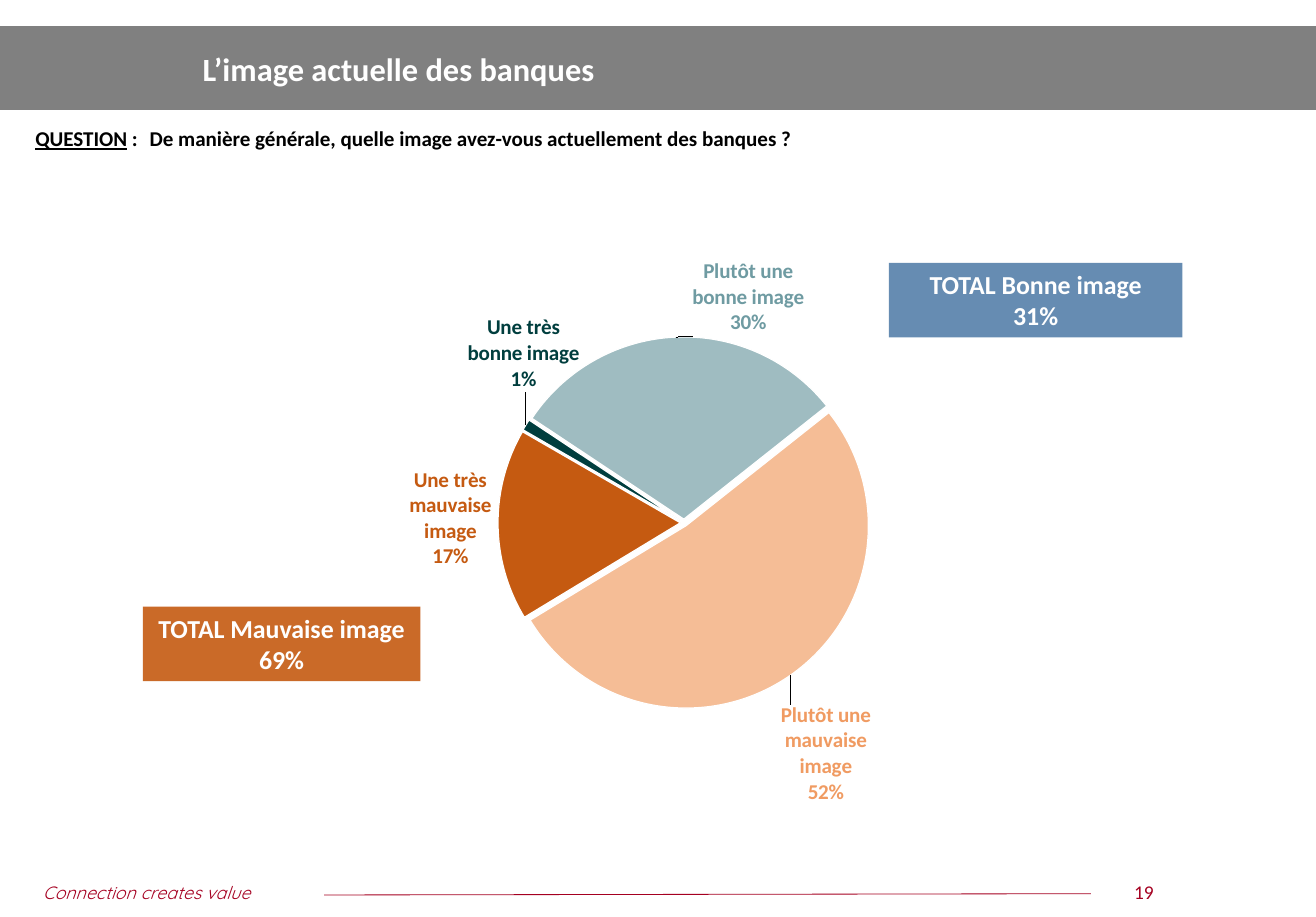
from dataclasses import dataclass

import lxml.etree
import pptx
import pptx.chart.data
import pptx.dml.color
import pptx.enum.chart
import pptx.enum.shapes
import pptx.enum.text
import pptx.oxml
import pptx.oxml.ns
import pptx.util

Pt = pptx.util.Pt
qn = pptx.oxml.ns.qn
Align = pptx.enum.text.PP_ALIGN
Anchor = pptx.enum.text.MSO_ANCHOR
OUTER = pptx.enum.chart.XL_LABEL_POSITION.OUTSIDE_END
FONT = "Calibri"
RED = "A50021"
WHITE = "FFFFFF"


@dataclass
class Box:
    left: float
    top: float
    width: float
    height: float
    text: str = ""
    size: float = 12
    color: str = WHITE
    fill: str = ""
    alpha: int = 100
    bold: bool = False
    slant: bool = False
    align: Align = Align.CENTER
    anchor: Anchor = Anchor.TOP
    face: str = FONT


@dataclass
class Slice:
    name: str
    value: float
    fill: str
    ink: str
    shift: tuple[float, float]
    alpha: int = 100
    share: bool = True


def tint(form, code: str, alpha: int = 100) -> None:
    form.solid()
    form.fore_color.rgb = pptx.dml.color.RGBColor.from_string(code)
    if alpha < 100:
        node = form._xPr.find(qn("a:solidFill"))[0]
        lxml.etree.SubElement(node, qn("a:alpha"), val=str(alpha * 1000))


def style(font, size: float, code: str, bold: bool = False, face: str = FONT) -> None:
    font.size = Pt(size)
    font.name = face
    font.bold = bold
    tint(font.fill, code)


def draw(slide, box: Box):
    area = [Pt(n) for n in (box.left, box.top, box.width, box.height)]
    if box.fill:
        shape = slide.shapes.add_shape(pptx.enum.shapes.MSO_SHAPE.RECTANGLE, *area)
        shape.shadow.inherit = False
        tint(shape.fill, box.fill, box.alpha)
        shape.line.fill.background()
    else:
        shape = slide.shapes.add_textbox(*area)
    frame = shape.text_frame
    frame.word_wrap = True
    frame.vertical_anchor = box.anchor
    para = frame.paragraphs[0]
    para.text = box.text
    para.alignment = box.align
    style(para.font, box.size, box.color, box.bold, box.face)
    para.font.italic = box.slant
    return shape


def rule(slide, x1: float, y1: float, x2: float, y2: float) -> None:
    kind = pptx.enum.shapes.MSO_CONNECTOR.STRAIGHT
    line = slide.shapes.add_connector(kind, Pt(x1), Pt(y1), Pt(x2), Pt(y2))
    tint(line.line.fill, RED)
    line.line.width = Pt(0.5)
    lxml.etree.SubElement(line._element.spPr, qn("a:effectLst"))


def ask(slide, head: str, text: str) -> None:
    box = draw(slide, Box(15.4, 69.8, 784.8, 41.8, align=Align.JUSTIFY))
    frame = box.text_frame
    frame.margin_left, frame.margin_right = Pt(6.5), Pt(26)
    frame.margin_top = frame.margin_bottom = Pt(13)
    para = frame.paragraphs[0]
    props = para._p.get_or_add_pPr()
    props.set("marL", str(Pt(70.6)))
    props.set("indent", str(-Pt(70.6)))
    style(para.font, 13, "000000", True)
    for part, under in ((head, True), (text, False)):
        run = para.add_run()
        run.text = part
        run.font.underline = under


def place(**rules) -> lxml.etree.ElementBase:
    node = pptx.oxml.parse_xml(
        '<c:layout xmlns:c="http://schemas.openxmlformats.org/drawingml/2006/chart"/>')
    man = lxml.etree.SubElement(node, qn("c:manualLayout"))
    for name, val in rules.items():
        lxml.etree.SubElement(man, qn("c:" + name), val=str(val))
    return node


def label(point, part: Slice) -> None:
    tag = point.data_label
    style(tag.font, 13, part.ink, True)
    tag.position = OUTER
    node = tag._dLbl
    flags = {"showVal": not part.share, "showCatName": True, "showPercent": part.share}
    for name, flag in flags.items():
        node.find(qn("c:" + name)).set("val", str(int(flag)))
    lxml.etree.SubElement(node, qn("c:separator")).text = "\n"
    x, y = part.shift
    node.find(qn("c:idx")).addnext(place(x=x, y=y))


def pie(slide, parts: list[Slice]) -> None:
    data = pptx.chart.data.CategoryChartData(number_format="0%")
    data.categories = [part.name for part in parts]
    data.add_series("Series 1", [part.value for part in parts])
    kind = pptx.enum.chart.XL_CHART_TYPE.PIE
    area = [Pt(n) for n in (187.2, 136.8, 405.4, 360.7)]
    chart = slide.shapes.add_chart(kind, *area, data).chart
    chart.has_title = chart.has_legend = False
    style(chart.font, 18, "000000")
    plot = chart.plots[0]
    plot.vary_by_categories = True
    series = plot.series[0]

    # Slices and their labels
    tags = series.data_labels
    style(tags.font, 13, "000000", True)
    tags.number_format = "0%"
    tags.number_format_is_linked = False
    tags.position = OUTER
    tags.show_value = False
    tags.show_category_name = tags.show_percentage = True
    for index, part in enumerate(parts):
        point = series.points[index]
        tint(point.format.fill, part.fill, part.alpha)
        tint(point.format.line.fill, WHITE)
        point.format.line.width = Pt(0.75)
        label(point, part)
    gap = lxml.etree.Element(qn("c:explosion"), val="2")
    series._element.find(qn("c:dPt")).addprevious(gap)

    # Start angle and plot area
    node = chart._chartSpace.find(".//" + qn("c:pieChart"))
    turn = node.find(qn("c:firstSliceAng"))
    if turn is None:
        turn = lxml.etree.SubElement(node, qn("c:firstSliceAng"))
    turn.set("val", "300")
    host = node.getparent()
    for old in host.findall(qn("c:layout")):
        host.remove(old)
    host.insert(0, place(layoutTarget="inner", xMode="edge", yMode="edge",
                         x=0.297, y=0.198, w=0.567, h=0.637))


def main() -> None:
    deck = pptx.Presentation()
    deck.slide_width, deck.slide_height = Pt(812.9), Pt(566.6)
    slide = deck.slides.add_slide(deck.slide_layouts[6])

    # Title band and footer
    draw(slide, Box(0, 16.1, 812.9, 51.8, fill="808080"))
    draw(slide, Box(19.4, 541, 214.6, 20.9, "Connection creates value", 11, RED,
                    slant=True, align=Align.LEFT, face="Quicksand"))
    rule(slide, 200.2, 553, 673.9, 552.2)
    draw(slide, Box(685.4, 540, 42.5, 21.6, "19", 12, RED))

    # Pie of opinions
    pie(slide, [
        Slice("Une très bonne image", 0.01, "003E3E", "003E3E", (0.09, -0.05), share=False),
        Slice("Plutôt une bonne image", 0.3, "417B85", "6F9BA2", (0.11, 0.01), 50),
        Slice("Plutôt une mauvaise image", 0.52, "F4B183", "F09B62", (-0.02, 0.04), 84),
        Slice("Une très mauvaise image", 0.17, "C55A11", "C55A11", (0, -0.01)),
    ])

    # Totals
    draw(slide, Box(549, 162.4, 181.4, 46.1, "TOTAL Bonne image\n31%", 16,
                    fill="336699", alpha=75, bold=True))
    draw(slide, Box(88.2, 374.8, 171.4, 46.1, "TOTAL Mauvaise image\n69%", 16,
                    fill="C55A11", alpha=90, bold=True))

    # Title and question
    draw(slide, Box(118.1, 16.3, 682.6, 51.8, "L’image actuelle des banques", 20,
                    bold=True, align=Align.JUSTIFY, anchor=Anchor.MIDDLE))
    ask(slide, "QUESTION",
        " :\tDe manière générale, quelle image avez-vous actuellement des banques ?")
    deck.save("out.pptx")


if __name__ == "__main__":
    main()
